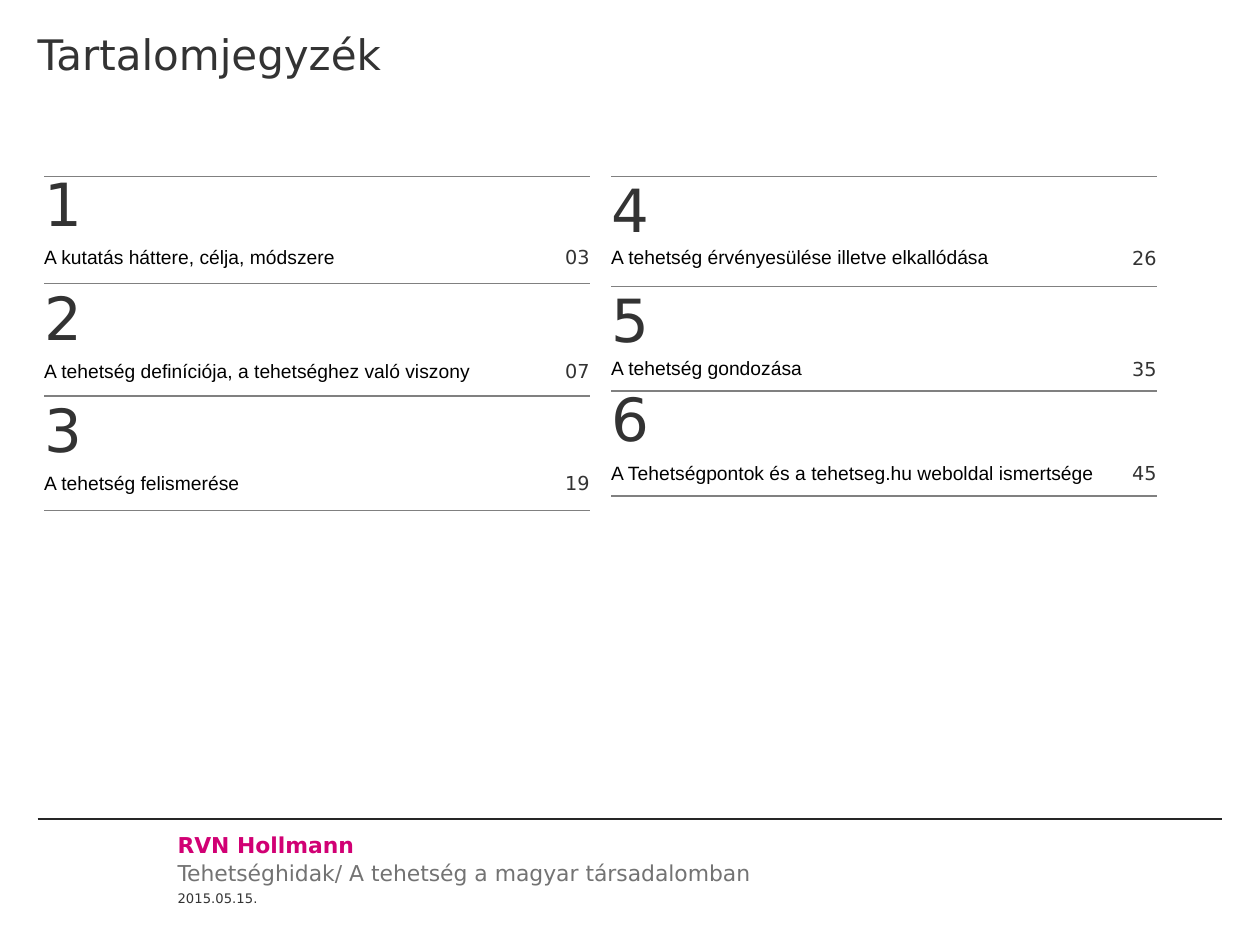
import pptx
import pptx.dml.color
import pptx.enum.shapes
import pptx.enum.text
import pptx.oxml
import pptx.oxml.ns
import pptx.util

Cm = pptx.util.Cm
Pt = pptx.util.Pt
Align = pptx.enum.text.PP_ALIGN
Anchor = pptx.enum.text.MSO_ANCHOR

COLORS = {
    "text": "333333",
    "entry": "000000",
    "muted": "737373",
    "accent": "D10074",
    "rule": "808080",
    "footer_rule": "262626",
}
SANS, ARIAL = "DejaVu Sans", "Arial"
PLAIN_STYLE = "{2D5ABB26-0587-4C30-8999-92F81FD0307C}"
GAP, SIDE = 0.13, 0.18

# number, title, page, number row height, title row height,
# space above the number, space below the title
LEFT_ENTRIES = [
    ("1", "A kutatás háttere, célja, módszere", "03", 1.42, 0.74, 0, GAP),
    ("2", "A tehetség definíciója, a tehetséghez való viszony", "07", 1.55, 0.71, GAP, 0),
    ("3", "A tehetség felismerése", "19", 1.55, 0.76, GAP, 0),
]
RIGHT_ENTRIES = [
    ("4", "A tehetség érvényesülése illetve elkallódása", "26", 1.37, 0.79, GAP, 0),
    ("5", "A tehetség gondozása", "35", 1.45, 0.66, GAP, 0),
    ("6", "A Tehetségpontok és a tehetseg.hu weboldal ismertsége", "45", 1.45, 0.66, 0, GAP),
]


class ContentsPage:
    def __init__(self, page):
        self.page = page

    def set_text(self, frame, text, size, color="text", font=SANS, bold=False, align=Align.LEFT):
        para = frame.paragraphs[0]
        para.text = text
        para.alignment = align
        span = para.runs[0].font
        span.name, span.size, span.bold = font, Pt(size), bold
        span.color.rgb = pptx.dml.color.RGBColor.from_string(COLORS[color])
        return para

    def set_margins(self, target, left, top, right, bottom):
        target.margin_left, target.margin_top = Cm(left), Cm(top)
        target.margin_right, target.margin_bottom = Cm(right), Cm(bottom)

    def title(self, text):
        box = self.page.shapes.title
        box.left, box.top, box.width, box.height = Cm(0), Cm(0), Cm(25.4), Cm(2.87)
        frame = box.text_frame
        frame.auto_size = pptx.enum.text.MSO_AUTO_SIZE.NONE
        frame.vertical_anchor = Anchor.TOP
        self.set_margins(frame, 0.76, 0.58, 0.76, 0)
        self.set_text(frame, text, 24)

    def text_box(self, place, margins, text, size, color, bold=False, anchor=Anchor.TOP):
        frame = self.page.shapes.add_textbox(*map(Cm, place)).text_frame
        frame.word_wrap = True
        frame.vertical_anchor = anchor
        self.set_margins(frame, *margins)
        self.set_text(frame, text, size, color, bold=bold)

    def rule(self, left, right, y):
        line = self.page.shapes.add_connector(
            pptx.enum.shapes.MSO_CONNECTOR.STRAIGHT, Cm(left), Cm(y), Cm(right), Cm(y))
        line.line.width = Pt(0.75)
        line.line.color.rgb = pptx.dml.color.RGBColor.from_string(COLORS["footer_rule"])
        line._element.spPr.append(self.xml("<a:effectLst %s/>"))

    def xml(self, markup):
        return pptx.oxml.parse_xml(markup % pptx.oxml.ns.nsdecls("a"))

    def cell_border(self, cell, side):
        """Draw a 1 pt border; side is T or B."""
        cell._tc.get_or_add_tcPr().insert(0, self.xml(
            f'<a:ln{side} w="12700" %s><a:solidFill><a:srgbClr val="{COLORS["rule"]}"/>'
            f'</a:solidFill></a:ln{side}>'))

    def contents_table(self, left, entries):
        heights = [height for entry in entries for height in entry[3:5]]
        table = self.page.shapes.add_table(
            len(heights), 2, Cm(left), Cm(3.56), Cm(11), Cm(sum(heights))).table
        table.first_row = table.horz_banding = False
        table._tbl.tblPr.find(pptx.oxml.ns.qn("a:tableStyleId")).text = PLAIN_STYLE
        for column, width in zip(table.columns, (10.31, 0.69)):
            column.width = Cm(width)
        for row, height in zip(table.rows, heights):
            row.height = Cm(height)
        for cell in table.iter_cells():
            cell.fill.background()
            self.set_margins(cell, 0, 0, 0, 0)

        for index, (number, title, page_number, _, _, above, below) in enumerate(entries):
            number_cell = table.cell(2 * index, 0)
            title_cell, page_cell = (table.cell(2 * index + 1, column) for column in (0, 1))
            self.set_margins(number_cell, 0, above, SIDE, 0)
            self.set_margins(title_cell, 0, 0, SIDE, below)
            self.set_margins(page_cell, SIDE, 0, 0, GAP)
            self.set_text(number_cell.text_frame, number, 34).line_spacing = 0.9
            self.set_text(title_cell.text_frame, title, 11, "entry", ARIAL)
            self.set_text(page_cell.text_frame, page_number, 11, align=Align.RIGHT)
            for cell in (title_cell, page_cell):
                self.cell_border(cell, "B")
        for column in (0, 1):
            self.cell_border(table.cell(0, column), "T")


def main():
    deck = pptx.Presentation()
    deck.slide_width, deck.slide_height = Cm(25.4), Cm(19.05)
    contents = ContentsPage(deck.slides.add_slide(deck.slide_layouts[5]))

    footer_margins = (1.4, 0.25, 0.25, 0.13)
    contents.text_box((2.18, 17.07, 13.59, 1.04), footer_margins,
                      "Tehetséghidak/ A tehetség a magyar társadalomban", 12.5, "muted")
    contents.text_box((3.58, 18.03, 2.79, 0.23), (0, 0, 0, 0),
                      "2015.05.15.", 7.5, "text", anchor=Anchor.BOTTOM)
    contents.rule(0.76, 24.64, 16.51)
    contents.text_box((2.18, 16.51, 13.59, 1.04), footer_margins,
                      "RVN Hollmann", 12.5, "accent", bold=True)

    contents.title("Tartalomjegyzék")
    contents.contents_table(0.89, LEFT_ENTRIES)
    contents.contents_table(12.32, RIGHT_ENTRIES)
    deck.save("out.pptx")


if __name__ == "__main__":
    main()
